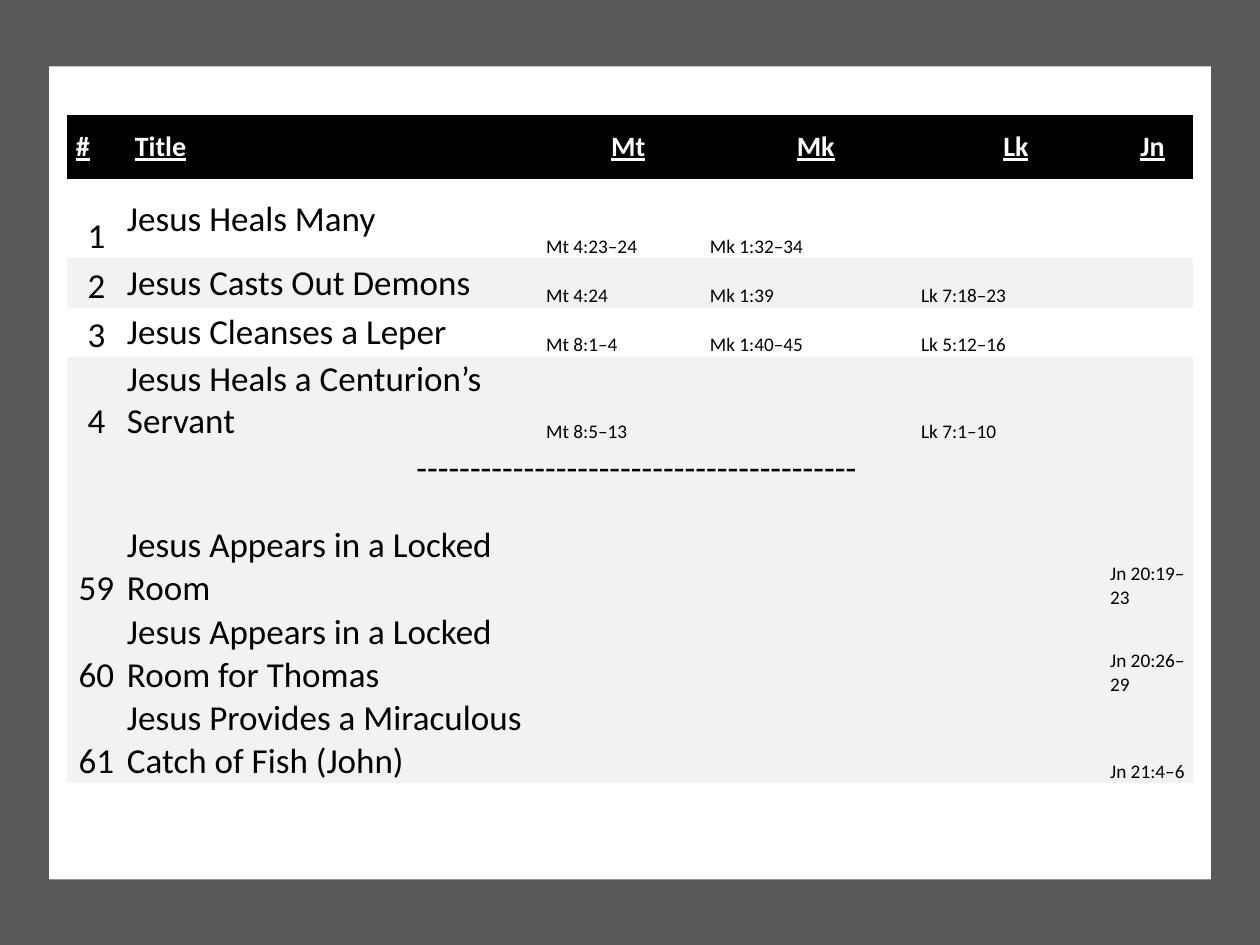
from pptx import Presentation
from pptx.dml.color import RGBColor
from pptx.enum.shapes import MSO_SHAPE
from pptx.enum.text import MSO_ANCHOR, PP_ALIGN
from pptx.util import Cm, Pt

RECTANGLE = MSO_SHAPE.RECTANGLE
MIDDLE, BOTTOM = MSO_ANCHOR.MIDDLE, MSO_ANCHOR.BOTTOM
LEFT, CENTER = PP_ALIGN.LEFT, PP_ALIGN.CENTER

COLORS = {"frame": "595959", "white": "FFFFFF", "black": "000000", "band": "F2F2F2"}
FONT = "Calibri"
PLAIN_STYLE = "{2D5ABB26-0587-4C30-8999-92F81FD0307C}"

HEADINGS = ["#", "Title", "Mt", "Mk", "Lk", "Jn"]
MIRACLES = [
    ("1", "Jesus Heals Many", "Mt 4:23–24", "Mk 1:32–34", "", ""),
    ("2", "Jesus Casts Out Demons", "Mt 4:24", "Mk 1:39", "Lk 7:18–23", ""),
    ("3", "Jesus Cleanses a Leper", "Mt 8:1–4", "Mk 1:40–45", "Lk 5:12–16", ""),
    ("4", "Jesus Heals a Centurion’s Servant", "Mt 8:5–13", "", "Lk 7:1–10", ""),
    ("-" * 41,),
    ("59", "Jesus Appears in a Locked Room", "", "", "", "Jn 20:19–23"),
    ("60", "Jesus Appears in a Locked Room for Thomas", "", "", "", "Jn 20:26–29"),
    ("61", "Jesus Provides a Miraculous Catch of Fish (John)", "", "", "", "Jn 21:4–6"),
]
UNBANDED = {"1", "3"}
COLUMN_WIDTHS = [1.19, 8.45, 3.3, 4.26, 3.81, 1.7]
ROW_HEIGHTS = [1.3, 1.6] + [0.99] * 7
HEADING_MARGINS = (0.18, 0.25, 0.13, 0.25)
ENTRY_MARGINS = (0.02, 0.02, 0.02, 0)
DIVIDER_MARGINS = (0.3, 0.08, 0.05, 0.66)


def color(name):
    return RGBColor.from_string(COLORS[name])


def add_panel(slide, left, top, width, height, fill):
    panel = slide.shapes.add_shape(RECTANGLE, Cm(left), Cm(top), Cm(width), Cm(height))
    panel.shadow.inherit = False
    panel.fill.solid()
    panel.fill.fore_color.rgb = color(fill)
    panel.line.fill.background()


def write_cell(cell, text, size, margins, anchor, align, fill=None, ink="black", heading=False):
    cell.margin_left, cell.margin_top, cell.margin_right, cell.margin_bottom = map(Cm, margins)
    cell.vertical_anchor = anchor
    if fill:
        cell.fill.solid()
        cell.fill.fore_color.rgb = color(fill)
    else:
        cell.fill.background()
    cell.text = text
    paragraph = cell.text_frame.paragraphs[0]
    paragraph.alignment = align
    font = paragraph.font
    font.name, font.size, font.color.rgb = FONT, Pt(size), color(ink)
    font.bold = font.underline = heading


def main():
    presentation = Presentation()
    presentation.slide_width, presentation.slide_height = Cm(25.4), Cm(19.05)
    slide = presentation.slides.add_slide(presentation.slide_layouts[6])
    add_panel(slide, 0, 0, 25.4, 19.05, "frame")
    add_panel(slide, 0.99, 1.34, 23.42, 16.39, "white")

    table = slide.shapes.add_table(
        len(MIRACLES) + 1, len(HEADINGS), Cm(1.35), Cm(2.31),
        Cm(sum(COLUMN_WIDTHS)), Cm(sum(ROW_HEIGHTS))).table
    table.first_row = table.horz_banding = False
    table._tbl.tblPr[0].text = PLAIN_STYLE
    for column, width in zip(table.columns, COLUMN_WIDTHS):
        column.width = Cm(width)
    for row, height in zip(table.rows, ROW_HEIGHTS):
        row.height = Cm(height)

    for c, heading in enumerate(HEADINGS):
        write_cell(table.cell(0, c), heading, 16, HEADING_MARGINS, MIDDLE,
                   LEFT if c < 2 else CENTER, "black", "white", True)

    for r, miracle in enumerate(MIRACLES, 1):
        if len(miracle) == 1:
            divider = table.cell(r, 0)
            divider.merge(table.cell(r, len(HEADINGS) - 1))
            write_cell(divider, miracle[0], 20, DIVIDER_MARGINS, MIDDLE, CENTER, "band")
            continue
        fill = None if miracle[0] in UNBANDED else "band"
        for c, entry in enumerate(miracle):
            write_cell(table.cell(r, c), entry, 20 if c < 2 else 11, ENTRY_MARGINS,
                       MIDDLE if c == 1 else BOTTOM, CENTER if c == 0 else LEFT, fill)

    presentation.save("out.pptx")


if __name__ == "__main__":
    main()
